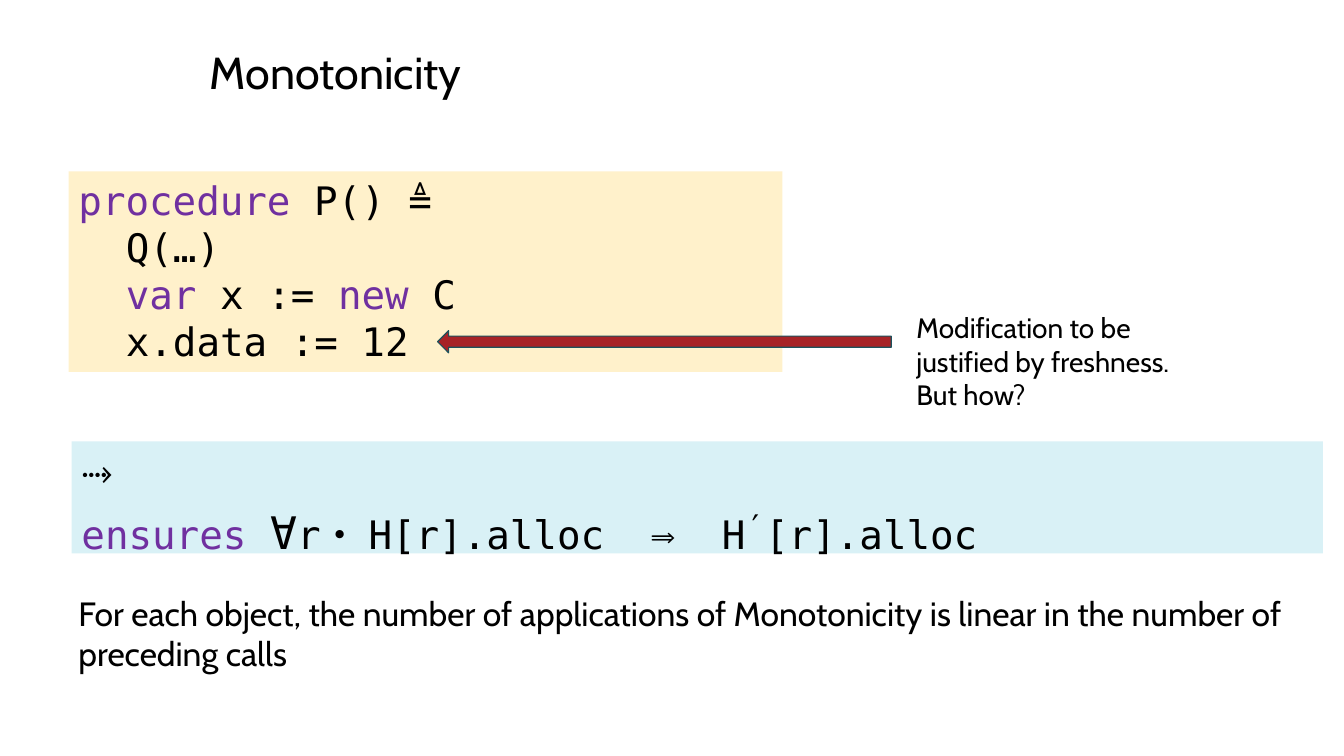
from dataclasses import dataclass
from pptx import Presentation
from pptx.dml.color import RGBColor
from pptx.enum.shapes import MSO_SHAPE as Kind
from pptx.enum.text import MSO_ANCHOR as Anchor, PP_ALIGN as Align
from pptx.util import Pt


@dataclass(frozen=True)
class Theme:
    text: str = "Cabin"
    mono: str = "DejaVu Sans Mono"
    black: str = "000000"
    key: str = "7030A0"
    sand: str = "FFF1CB"
    sky: str = "D9F1F6"
    red: str = "A72327"
    edge: str = "1C525C"
    title: int = 32
    code: int = 28
    body: int = 24
    note: int = 20
    quant: int = 32
    prime: int = 40
    raised: int = 20000  # thousandths of a percent


T = Theme()
PX = 9144  # EMU, 100 px to the inch
WIDE, HIGH = 1333, 750
STEP = 47  # code indent, two characters

# Content: a run is (words, style), a line is (indent level, runs)
TITLE = [(0, [("Monotonicity", "title")])]
CODE = [
    (0, [("procedure", "key"), (" P() ≜", "code")]),
    (1, [("Q(…)", "code")]),
    (1, [("var", "key"), (" x := ", "code"), ("new", "key"), (" C", "code")]),
    (1, [("x.data := 12", "code")]),
]
NOTE = [
    (0, [("Modification to be justified by freshness.", "note")]),
    (0, [("But how?", "note")]),
]
RULE = [
    (0, [("⤑", "code")]),
    (0, [("ensures ", "key"), ("∀", "quant"),
         ("r・ H[r].alloc  ⟹  H", "code"), ("′", "prime"),
         ("[r].alloc", "code")]),
]
COST = [(0, [("For each object, the number of applications of Monotonicity "
              "is linear in the number of preceding calls", "body")])]

# Style: font, size, colour
STYLES = {
    "title": (T.text, T.title, T.black),
    "note": (T.text, T.note, T.black),
    "body": (T.text, T.body, T.black),
    "code": (T.mono, T.code, T.black),
    "key": (T.mono, T.code, T.key),
    "quant": (T.mono, T.quant, T.black),
    "prime": (T.mono, T.prime, T.black),
}

# Place in px (left, top, width, height), fill, lines
BOXES = [
    ((198, 39, 1079, 64), None, TITLE),
    ((68, 170, 708, 199), T.sand, CODE),
    ((899, 303, 281, 111), None, NOTE),
    ((71, 438, 1241, 111), T.sky, RULE),
    ((68, 583, 1232, 91), None, COST),
]
ARROW = (434, 328, 450, 22)


def rgb(code):
    return RGBColor.from_string(code)


def emu(place):
    return [n * PX for n in place]


def add_shape(slide, kind, place, fill):
    shape = slide.shapes.add_shape(kind, *emu(place))
    shape.shadow.inherit = False
    shape.fill.solid()
    shape.fill.fore_color.rgb = rgb(fill)
    shape.line.fill.background()
    return shape


def add_run(para, words, style):
    run = para.add_run()
    run.text = words
    face, size, tint = STYLES[style]
    run.font.name = face
    run.font.size = Pt(size)
    run.font.color.rgb = rgb(tint)
    props = run.font._element
    for tag in ("ea", "cs", "sym"):
        if tag == "sym":
            continue
        props.makeelement
    if style == "prime":
        props.set("baseline", str(T.raised))


def write(shape, lines):
    frame = shape.text_frame
    frame.word_wrap = True
    frame.vertical_anchor = Anchor.TOP
    for i, (level, runs) in enumerate(lines):
        para = frame.add_paragraph() if i else frame.paragraphs[0]
        para.alignment = Align.LEFT
        if level:
            para._p.get_or_add_pPr().set("marL", str(level * STEP * PX))
        for words, style in runs:
            add_run(para, words, style)


def main():
    deck = Presentation()
    deck.slide_width, deck.slide_height = emu((WIDE, HIGH))
    slide = deck.slides.add_slide(deck.slide_layouts[6])

    # Text boxes and code panels
    for place, fill, lines in BOXES:
        if fill:
            shape = add_shape(slide, Kind.RECTANGLE, place, fill)
        else:
            shape = slide.shapes.add_textbox(*emu(place))
        write(shape, lines)

    # Arrow from the note to the code
    arrow = add_shape(slide, Kind.LEFT_ARROW, ARROW, T.red)
    arrow.line.color.rgb = rgb(T.edge)
    arrow.line.width = Pt(0.85)

    deck.save("out.pptx")


if __name__ == "__main__":
    main()
